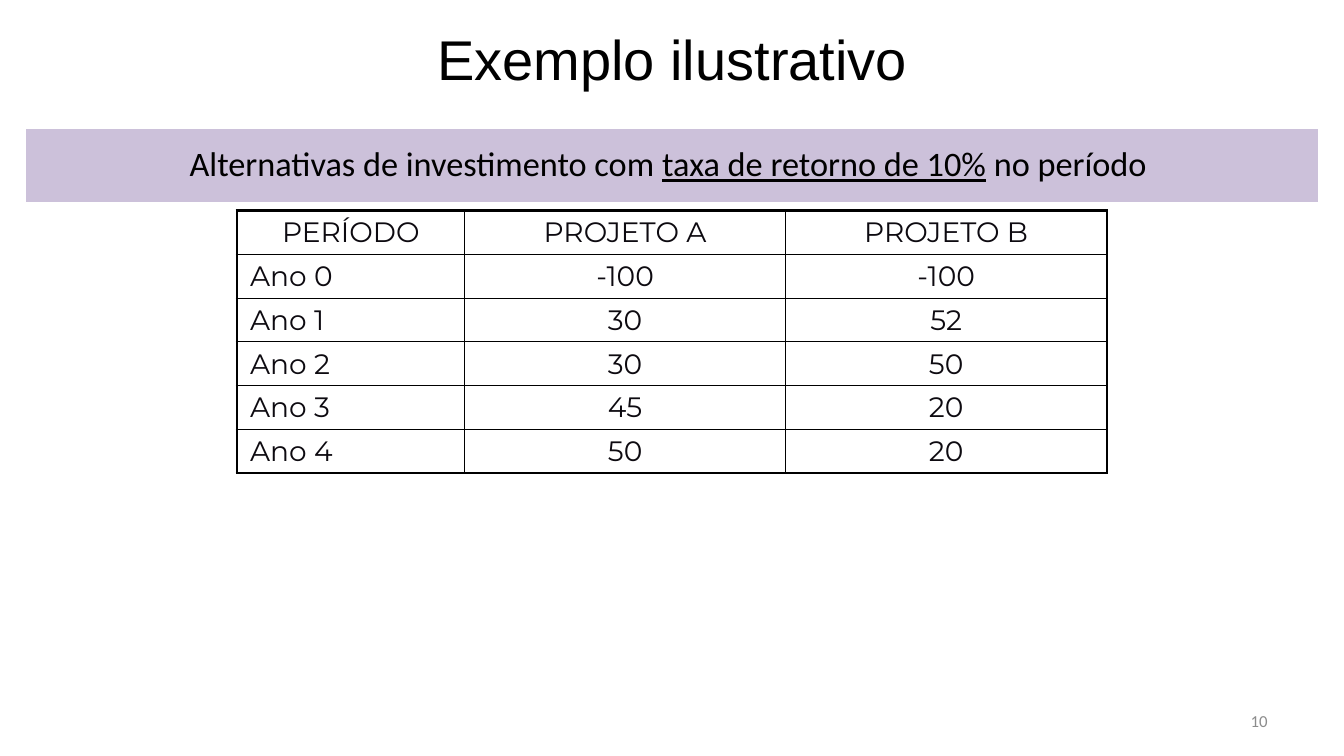
from lxml.etree import SubElement
from pptx import Presentation
from pptx.dml.color import RGBColor
from pptx.enum.shapes import MSO_SHAPE
from pptx.enum.text import MSO_ANCHOR as Anchor, PP_ALIGN as Align
from pptx.oxml.ns import qn
from pptx.util import Inches, Pt

COLORS = {"black": "000000", "white": "FFFFFF", "lilac": "CCC1DA",
          "cell text": "0D0A10", "gray": "8C8C8C"}
FORMATS = {
    "title": {"name": "Arial", "size": Pt(40), "color": "black"},
    "banner": {"name": "Calibri", "size": Pt(24.5), "color": "black"},
    "cell": {"name": "Montserrat", "size": Pt(20), "bold": False, "color": "cell text"},
    "number": {"name": "Calibri", "size": Pt(12), "color": "gray"},
}
PROJECTS = [
    ("PERÍODO", "PROJETO A", "PROJETO B"),
    ("Ano 0", "-100", "-100"),
    ("Ano 1", "30", "52"),
    ("Ano 2", "30", "50"),
    ("Ano 3", "45", "20"),
    ("Ano 4", "50", "20"),
]
COLUMN_WIDTHS = [2.26, 3.18, 3.19]
OUTER_LINE, INNER_LINE = 2.25, 1


def rgb(name):
    return RGBColor.from_string(COLORS[name])


def add_run(paragraph, text, style, underline=False):
    run = paragraph.add_run()
    run.text = text
    run.font.underline = underline
    for attribute, value in FORMATS[style].items():
        if attribute == "color":
            run.font.color.rgb = rgb(value)
        else:
            setattr(run.font, attribute, value)


def place(shape, box):
    for attribute, value in zip(("left", "top", "width", "height"), box):
        setattr(shape, attribute, Inches(value))


def set_paragraph(frame, align):
    frame.word_wrap = True
    frame.vertical_anchor = Anchor.MIDDLE
    paragraph = frame.paragraphs[0]
    paragraph.alignment = align
    return paragraph


def add_title(slide, box):
    title = slide.shapes.title
    place(title, box)
    add_run(set_paragraph(title.text_frame, Align.CENTER), "Exemplo ilustrativo", "title")


def add_banner(slide, box):
    banner = slide.shapes.add_shape(MSO_SHAPE.RECTANGLE, *map(Inches, box))
    banner.shadow.inherit = False
    banner.fill.solid()
    banner.fill.fore_color.rgb = rgb("lilac")
    banner.line.color.rgb = rgb("white")
    banner.line.width = Pt(2)
    frame = banner.text_frame
    for side in ("left", "top", "right", "bottom"):
        setattr(frame, f"margin_{side}", Inches(0.03))
    paragraph = set_paragraph(frame, Align.CENTER)
    paragraph.line_spacing = 0.9
    add_run(paragraph, "Alternativas de investimento com ", "banner")
    add_run(paragraph, "taxa de retorno de 10%", "banner", underline=True)
    add_run(paragraph, " no período ", "banner")


def set_borders(cell, widths):
    """Draw the left, right, top and bottom lines, with widths in points."""
    properties = cell._tc.get_or_add_tcPr()
    for index, (side, width) in enumerate(zip("LRTB", widths)):
        line = SubElement(properties, qn(f"a:ln{side}"), w=str(Pt(width)))
        fill = SubElement(line, qn("a:solidFill"))
        SubElement(fill, qn("a:srgbClr"), val=COLORS["black"])
        properties.insert(index, line)


def add_project_table(slide, box):
    row_count, column_count = len(PROJECTS), len(COLUMN_WIDTHS)
    table = slide.shapes.add_table(row_count, column_count, *map(Inches, box)).table
    table.first_row = table.horz_banding = False
    for column, width in zip(table.columns, COLUMN_WIDTHS):
        column.width = Inches(width)
    for row_index, values in enumerate(PROJECTS):
        for column_index, value in enumerate(values):
            cell = table.cell(row_index, column_index)
            cell.fill.background()
            cell.margin_left = cell.margin_right = Inches(0.13)
            paragraph = cell.text_frame.paragraphs[0]
            is_year = column_index == 0 and row_index > 0
            paragraph.alignment = Align.LEFT if is_year else Align.CENTER
            add_run(paragraph, value, "cell")
            on_edge = (column_index == 0, column_index == column_count - 1,
                       row_index == 0, row_index == row_count - 1)
            set_borders(cell, [OUTER_LINE if edge else INNER_LINE for edge in on_edge])


def add_slide_number(slide, box):
    number = slide.shapes.add_textbox(*map(Inches, box))
    add_run(set_paragraph(number.text_frame, Align.RIGHT), "10", "number")


def main():
    presentation = Presentation()
    presentation.slide_width = Inches(13.33)
    presentation.slide_height = Inches(7.5)
    slide = presentation.slides.add_slide(presentation.slide_layouts[5])
    add_slide_number(slide, (9.56, 6.95, 3.11, 0.4))
    add_title(slide, (3.39, -0.01, 6.55, 1.18))
    add_banner(slide, (0.24, 1.27, 12.85, 0.75))
    add_project_table(slide, (2.35, 2.09, sum(COLUMN_WIDTHS), 2.6))
    presentation.save("out.pptx")


if __name__ == "__main__":
    main()
